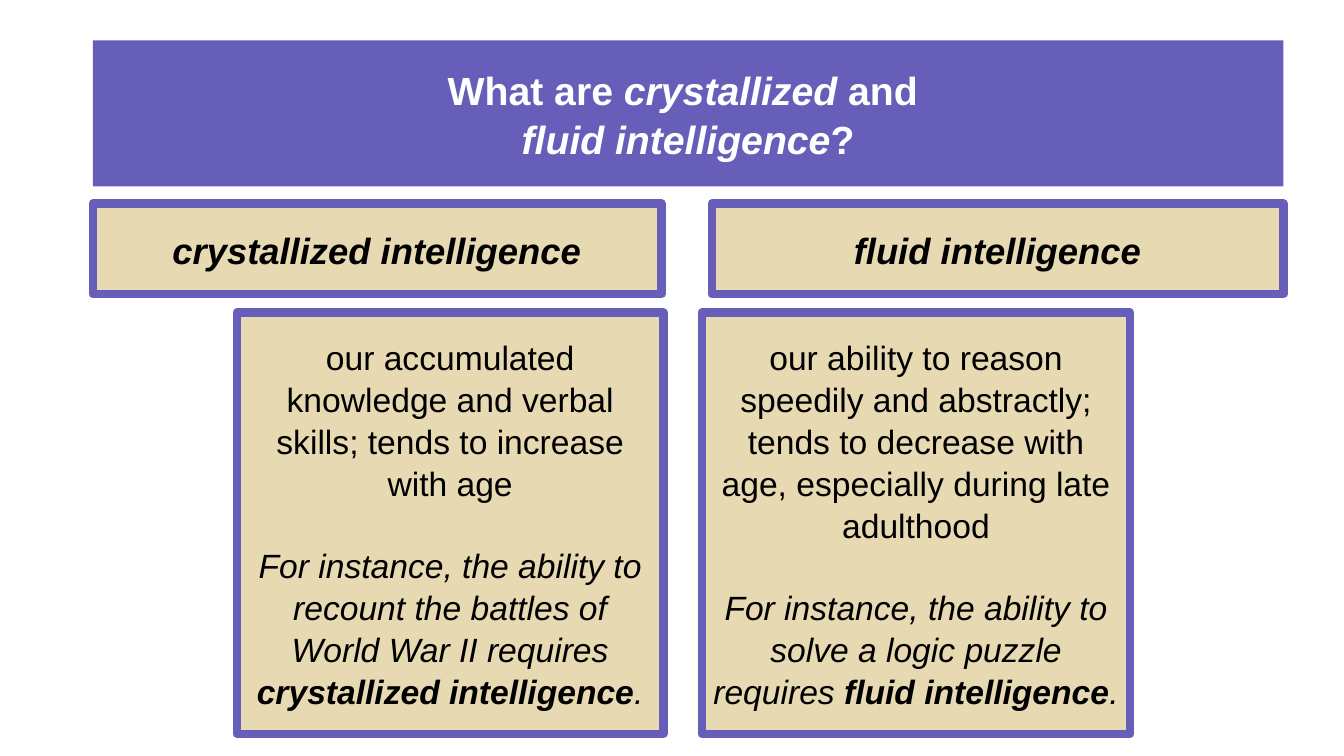
from pptx import Presentation
from pptx.dml.color import RGBColor
from pptx.enum.shapes import MSO_SHAPE
from pptx.enum.text import MSO_ANCHOR, PP_ALIGN
from pptx.util import Emu, Pt

RECTANGLE = MSO_SHAPE.RECTANGLE
MIDDLE = MSO_ANCHOR.MIDDLE
CENTER = PP_ALIGN.CENTER

EMU_PER_PX = 9144  # 100 px to the inch
FONT = "Arial"
LINE_SPACING = 1.04
COLORS = {"purple": "665EB8", "sand": "E7D9B1", "white": "FFFFFF", "black": "000000"}


def px(length):
    return Emu(length * EMU_PER_PX)


def add_panel(box, fill, text_color, size, paragraphs, border=None):
    """Add a centred text panel; each run is (text, styles), with b and i as styles."""
    panel = slide.shapes.add_shape(RECTANGLE, *[px(length) for length in box])
    panel.shadow.inherit = False
    panel.fill.solid()
    panel.fill.fore_color.rgb = RGBColor.from_string(COLORS[fill])
    if border:
        panel.line.color.rgb = RGBColor.from_string(COLORS[border])
        panel.line.width = Pt(6)
    else:
        panel.line.fill.background()

    frame = panel.text_frame
    frame.word_wrap = True
    frame.vertical_anchor = MIDDLE
    for index, runs in enumerate(paragraphs):
        paragraph = frame.paragraphs[0] if index == 0 else frame.add_paragraph()
        paragraph.alignment = CENTER
        paragraph.line_spacing = LINE_SPACING
        for text, styles in runs:
            if text == "\n":
                paragraph.add_line_break()
                continue
            run = paragraph.add_run()
            run.text = text
            run.font.name = FONT
            run.font.size = Pt(size)
            run.font.bold = "b" in styles
            run.font.italic = "i" in styles
            run.font.color.rgb = RGBColor.from_string(COLORS[text_color])
    return frame


presentation = Presentation()
presentation.slide_width = px(1333)
presentation.slide_height = px(750)
slide = presentation.slides.add_slide(presentation.slide_layouts[6])

question = [
    ("What are ", "b"),
    ("crystallized", "bi"),
    (" and ", "b"),
    ("\n", ""),
    ("fluid intelligence", "bi"),
    ("?", "b"),
]
add_panel((92, 40, 1181, 145), "purple", "white", 28, [question])

# term, heading (left, width), definition (left, width), definition lines, example
concepts = [
    (
        "crystallized intelligence", (92, 564), (235, 423),
        ["our accumulated knowledge and verbal skills; tends to increase", "with age"],
        "For instance, the ability to recount the battles of World War II requires ",
    ),
    (
        "fluid intelligence", (706, 567), (696, 425),
        ["our ability to reason speedily and abstractly;",
         "tends to decrease with age, especially during late adulthood"],
        "For instance, the ability to solve a logic puzzle requires ",
    ),
]

for term, heading_span, definition_span, definition, example in concepts:
    left, width = heading_span
    add_panel((left, 202, width, 90), "sand", "black", 26, [[(term, "bi")]], "purple")

    left, width = definition_span
    paragraphs = [[(line, "")] for line in definition]
    paragraphs.append([(example, "i"), (term, "bi"), (".", "i")])
    definition_text = add_panel(
        (left, 310, width, 418), "sand", "black", 24, paragraphs, "purple"
    )
    definition_text.paragraphs[-1].space_before = Pt(29)

presentation.save("out.pptx")
